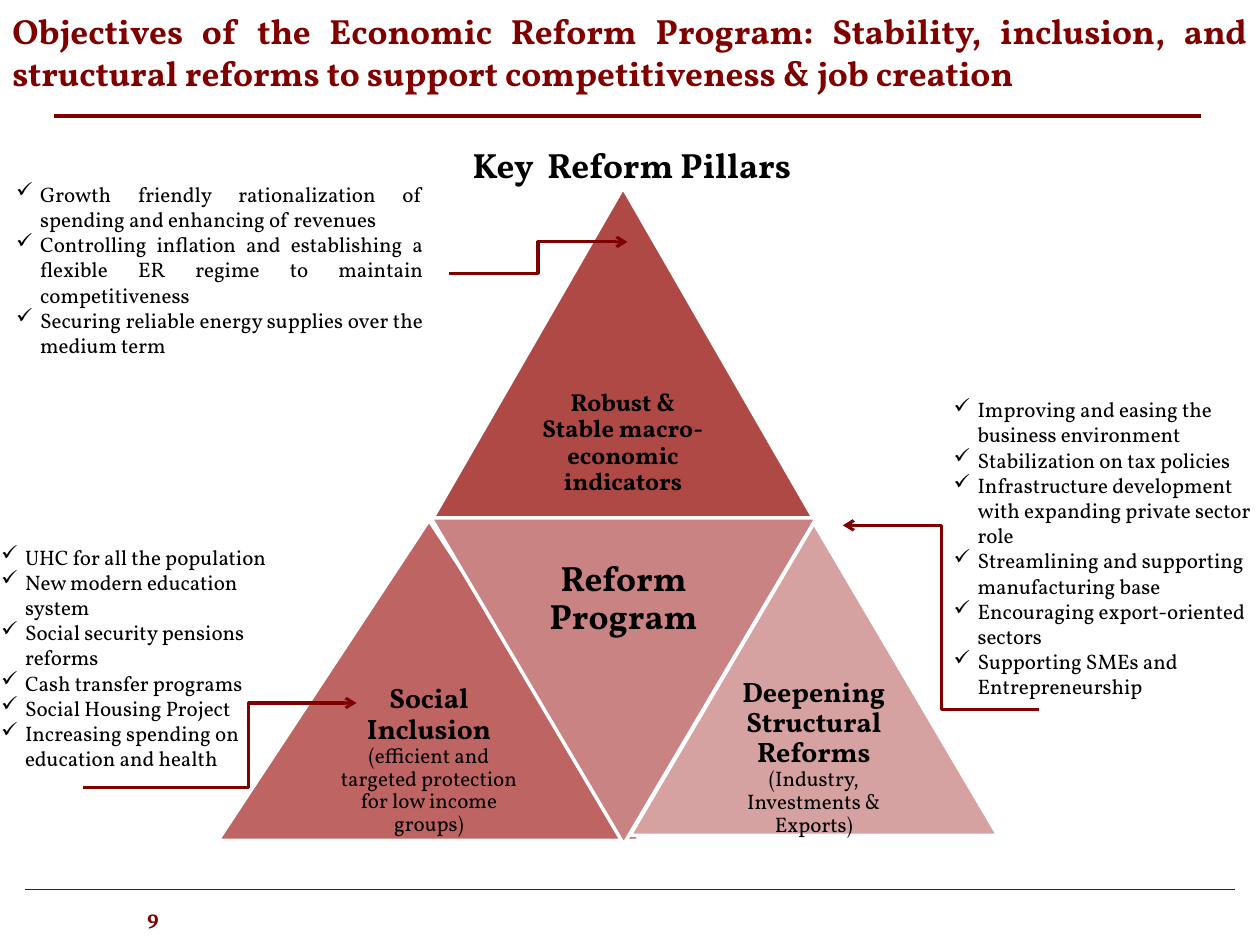
from pptx import Presentation
from pptx.dml.color import RGBColor
from pptx.enum.shapes import MSO_CONNECTOR, MSO_SHAPE
from pptx.enum.text import MSO_ANCHOR, PP_ALIGN
from pptx.oxml.ns import qn
from pptx.util import Pt
from lxml import etree

SCALE = 9144
FONT = "Vollkorn"
COLORS = {
    "maroon": "800000", "black": "000000", "white": "FFFFFF",
    "top": "AE4946", "left": "BE6462", "center": "C98382", "right": "D6A2A1",
}
LEFT, CENTER, RIGHT, JUSTIFY = PP_ALIGN.LEFT, PP_ALIGN.CENTER, PP_ALIGN.RIGHT, PP_ALIGN.JUSTIFY
TOP, MIDDLE, BOTTOM = MSO_ANCHOR.TOP, MSO_ANCHOR.MIDDLE, MSO_ANCHOR.BOTTOM
STRAIGHT, ELBOW = MSO_CONNECTOR.STRAIGHT, MSO_CONNECTOR.ELBOW
TRIANGLE = MSO_SHAPE.ISOSCELES_TRIANGLE

PILLARS = [
    ("top", (339, 149, 311, 270), False, "Robust & Stable macro-economic indicators", 14, ""),
    ("left", (173, 413, 335, 254), False, "Social Inclusion ", 16,
     "(efficient and targeted protection for low income groups)"),
    ("center", (342, 411, 306, 259), True, "Reform Program", 20, ""),
    ("right", (500, 415, 292, 248), False, "Deepening Structural Reforms ", 16,
     "(Industry, Investments & Exports)"),
]
MEASURES = [
    ((-9, 427, 241, 214), LEFT, [
        "UHC for all the population",
        "New modern education system",
        "Social security pensions reforms",
        "Cash transfer programs",
        "Social Housing Project",
        "Increasing spending on education and health",
    ]),
    ((3, 139, 343, 151), JUSTIFY, [
        "Growth friendly rationalization of spending and enhancing of revenues",
        "Controlling inflation and establishing a flexible ER regime to maintain competitiveness",
        "Securing reliable energy supplies over the medium term",
    ]),
    ((747, 310, 258, 252), LEFT, [
        "Improving and easing the business environment",
        "Stabilization on tax policies",
        "Infrastructure development with expanding private sector role",
        "Streamlining and supporting manufacturing base",
        "Encouraging export-oriented sectors",
        "Supporting SMEs and Entrepreneurship",
    ]),
]
ARROWS = [
    ((356, 217, 498, 192), 50000),
    ((66, 625, 283, 558), 60600),
    ((825, 563, 669, 417), 50000),
]


def emu(*lengths):
    """Turn px lengths into EMU."""
    return [round(length * SCALE) for length in lengths]


def color(name):
    """Look up a named colour."""
    return RGBColor.from_string(COLORS[name])


def style_span(span, size, bold=False, shade="black"):
    """Give a run its font."""
    span.font.name = FONT
    span.font.size = Pt(size)
    span.font.bold = bold
    span.font.color.rgb = color(shade)


def add_frame(page, box, insets=(10, 5), anchor=TOP):
    """Add a wrapping text box and return its frame."""
    frame = page.shapes.add_textbox(*emu(*box)).text_frame
    frame.word_wrap = True
    frame.vertical_anchor = anchor
    frame.margin_left = frame.margin_right = insets[0] * SCALE
    frame.margin_top = frame.margin_bottom = insets[1] * SCALE
    return frame


def add_line(page, ends, width, kind=STRAIGHT):
    """Draw a maroon connector without shadow."""
    line = page.shapes.add_connector(kind, *emu(*ends))
    line.line.color.rgb = color("maroon")
    line.line.width = Pt(width)
    etree.SubElement(line.element.spPr, qn("a:effectLst"))
    return line


def add_heading(page, box, text, size, align, shade="maroon", spacing=1.0, **layout):
    """Place one bold line or paragraph."""
    para = add_frame(page, box, **layout).paragraphs[0]
    para.text = text
    para.alignment = align
    para.line_spacing = spacing
    style_span(para.runs[0], size, True, shade)


def add_pillar(page, shade, box, inverted, title, size, detail):
    """Draw a triangle with its label in the wide half."""
    left, top, width, height = box
    triangle = page.shapes.add_shape(TRIANGLE, *emu(*box))
    triangle.shadow.inherit = False
    triangle.rotation = 180 if inverted else 0
    triangle.fill.solid()
    triangle.fill.fore_color.rgb = color(shade)
    triangle.line.color.rgb = color("white")
    triangle.line.width = Pt(2)

    label_top = top if inverted else top + height / 2
    label = (left + width / 4, label_top, width / 2, height / 2)
    para = add_frame(page, label, (7, 7), MIDDLE).paragraphs[0]
    para.text = title
    para.alignment = CENTER
    para.line_spacing = 0.9
    style_span(para.runs[0], size, True)
    if detail:
        span = para.add_run()
        span.text = detail
        style_span(span, 12)


def add_measures(page, box, align, items):
    """Place a list with check-mark bullets."""
    frame = add_frame(page, box)
    frame.text = "\n".join(items)
    for para in frame.paragraphs:
        para.alignment = align
        style_span(para.runs[0], 12)
        properties = para._p.get_or_add_pPr()
        properties.set("marL", str(19 * SCALE))
        properties.set("indent", str(-19 * SCALE))
        etree.SubElement(properties, qn("a:buChar"), char="✓")


def add_arrow(page, ends, bend):
    """Draw an elbow arrow that turns at the given share of its width."""
    arrow = add_line(page, ends, 1.75, ELBOW)
    guides = arrow.element.spPr.find(qn("a:prstGeom")).get_or_add_avLst()
    etree.SubElement(guides, qn("a:gd"), name="adj1", fmla=f"val {bend}")
    etree.SubElement(arrow.line._get_or_add_ln(), qn("a:tailEnd"), type="arrow")


def add_page_frame(page):
    """Place the title, both rules and the page number."""
    add_line(page, (43, 92, 953, 92), 2)
    add_line(page, (20, 706, 980, 706), 0.75)
    add_heading(page, (43, 714, 83, 24), "9", 12, RIGHT, insets=(0, 0), anchor=BOTTOM)
    add_heading(
        page, (0, 3, 1000, 77),
        "Objectives of the Economic Reform Program: Stability, inclusion, and "
        "structural reforms to support competitiveness & job creation", 20, JUSTIFY)


def main():
    """Build the deck."""
    deck = Presentation()
    deck.slide_width, deck.slide_height = emu(1000, 750)
    page = deck.slides.add_slide(deck.slide_layouts[6])
    add_page_frame(page)
    add_heading(page, (230, 92, 543, 60), "Key  Reform Pillars", 20, CENTER, "black", 1.5)
    for pillar in PILLARS:
        add_pillar(page, *pillar)
    for measures in MEASURES:
        add_measures(page, *measures)
    for arrow in ARROWS:
        add_arrow(page, *arrow)
    deck.save("out.pptx")


if __name__ == "__main__":
    main()
